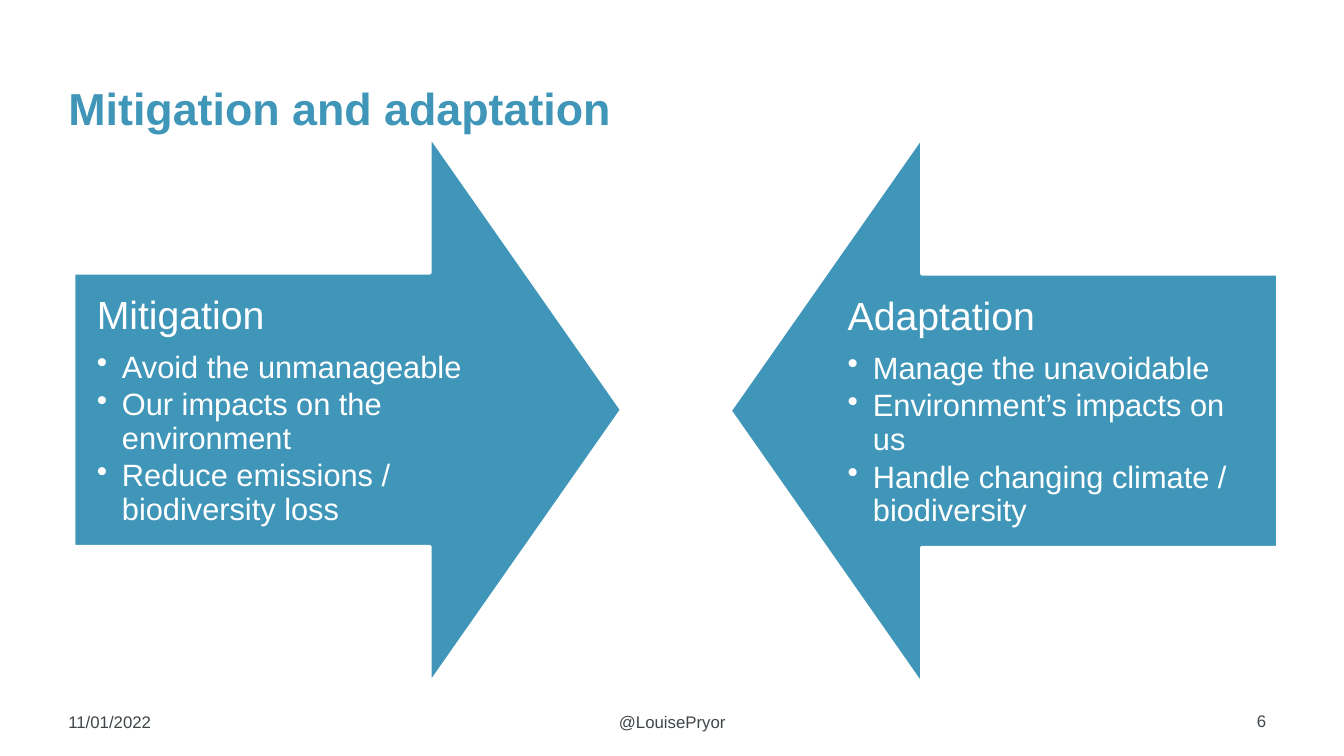
from dataclasses import dataclass

from lxml import etree
from pptx import Presentation
from pptx.dml.color import RGBColor
from pptx.enum.shapes import MSO_SHAPE
from pptx.enum.text import MSO_ANCHOR, PP_ALIGN
from pptx.oxml.ns import qn
from pptx.util import Pt

DOWN_ARROW = MSO_SHAPE.DOWN_ARROW
TOP, MIDDLE = MSO_ANCHOR.TOP, MSO_ANCHOR.MIDDLE
LEFT, CENTER, RIGHT = PP_ALIGN.LEFT, PP_ALIGN.CENTER, PP_ALIGN.RIGHT

COLORS = {"blue": "4096B8", "white": "FFFFFF", "grey": "3F4548"}
FONT = "Arial"
ARROW_WIDTH, ARROW_HEIGHT = 390.24, 390.96
PANEL_WIDTH, PANEL_HEIGHT = 322.56, 195.12
PANEL_DROP = 97.92  # from the top of an arrow to the top of its text
PANEL_INSET = 15.84
BULLET_INDENT = 18


@dataclass(frozen=True)
class Arrow:
    left: float
    top: float
    rotation: float
    text_left: float
    heading: str
    points: tuple[str, ...]


@dataclass(frozen=True)
class Label:
    text: str
    left: float
    top: float
    width: float
    height: float
    size: float = 12
    color: str = "grey"
    bold: bool = False
    align: PP_ALIGN = LEFT
    anchor: MSO_ANCHOR = TOP


ARROWS = (
    Arrow(53.28, 97.2, 270, 53.28, "Mitigation", (
        "Avoid the unmanageable",
        "Our impacts on the environment",
        "Reduce emissions / biodiversity loss",
    )),
    Arrow(522, 97.92, 90, 589.68, "Adaptation", (
        "Manage the unavoidable",
        "Environment’s impacts on us",
        "Handle changing climate / biodiversity",
    )),
)

TITLE = Label("Mitigation and adaptation", 41.76, 31.68, 870.48, 90,
              size=32, color="blue", bold=True, anchor=MIDDLE)
FOOTERS = (
    Label("11/01/2022", 41.76, 504.72, 211.68, 25.92),
    Label("@LouisePryor", 253.44, 504.72, 453.6, 25.92, align=CENTER),
    Label("6", 843.84, 504, 67.68, 26.64, align=RIGHT),
)


def rgb(name: str) -> RGBColor:
    return RGBColor.from_string(COLORS[name])


def add_box(page, left: float, top: float, width: float, height: float,
            anchor: MSO_ANCHOR = TOP):
    """Add an empty wrapping text box and return its text frame."""
    box = page.shapes.add_textbox(Pt(left), Pt(top), Pt(width), Pt(height))
    frame = box.text_frame
    frame.word_wrap = True
    frame.vertical_anchor = anchor
    return frame


def write(para, text: str, *, size: float, color: str, bold: bool = False,
          align: PP_ALIGN = LEFT, line_spacing: float = 1.0,
          space_after: float = 0, bullet: bool = False) -> None:
    """Fill a paragraph with one formatted span."""
    para.alignment = align
    para.line_spacing = line_spacing
    para.space_after = Pt(space_after)
    if bullet:
        properties = para._p.get_or_add_pPr()
        properties.set("marL", str(Pt(BULLET_INDENT)))
        properties.set("indent", str(-Pt(BULLET_INDENT)))
        etree.SubElement(properties, qn("a:buChar")).set("char", "•")
    span = para.add_run()
    span.text = text
    span.font.name = FONT
    span.font.size = Pt(size)
    span.font.bold = bold
    span.font.color.rgb = rgb(color)


def draw_label(page, label: Label) -> None:
    frame = add_box(page, label.left, label.top, label.width, label.height, label.anchor)
    write(frame.paragraphs[0], label.text, size=label.size, color=label.color,
          bold=label.bold, align=label.align)


def draw_arrow(page, arrow: Arrow) -> None:
    shape = page.shapes.add_shape(DOWN_ARROW, Pt(arrow.left), Pt(arrow.top),
                                  Pt(ARROW_WIDTH), Pt(ARROW_HEIGHT))
    shape.adjustments[0] = 0.5
    shape.adjustments[1] = 0.35
    shape.rotation = arrow.rotation
    shape.shadow.inherit = False
    shape.fill.solid()
    shape.fill.fore_color.rgb = rgb("blue")
    shape.line.color.rgb = rgb("white")
    shape.line.width = Pt(2)

    # Heading and bullets lie upright over the turned arrow
    frame = add_box(page, arrow.text_left, arrow.top + PANEL_DROP,
                    PANEL_WIDTH, PANEL_HEIGHT)
    frame.margin_left = frame.margin_right = Pt(PANEL_INSET)
    frame.margin_top = frame.margin_bottom = Pt(PANEL_INSET)
    write(frame.paragraphs[0], arrow.heading, size=28, color="white",
          line_spacing=0.9, space_after=9.8)
    for point in arrow.points:
        para = frame.add_paragraph()
        para.level = 1
        write(para, point, size=22, color="white", line_spacing=0.9,
              space_after=3.3, bullet=True)


def main() -> None:
    deck = Presentation()
    deck.slide_width, deck.slide_height = Pt(960), Pt(540)
    page = deck.slides.add_slide(deck.slide_layouts[6])

    # Title
    draw_label(page, TITLE)

    # Facing arrows
    for arrow in ARROWS:
        draw_arrow(page, arrow)

    # Footer
    for footer in FOOTERS:
        draw_label(page, footer)

    deck.save("out.pptx")


if __name__ == "__main__":
    main()
